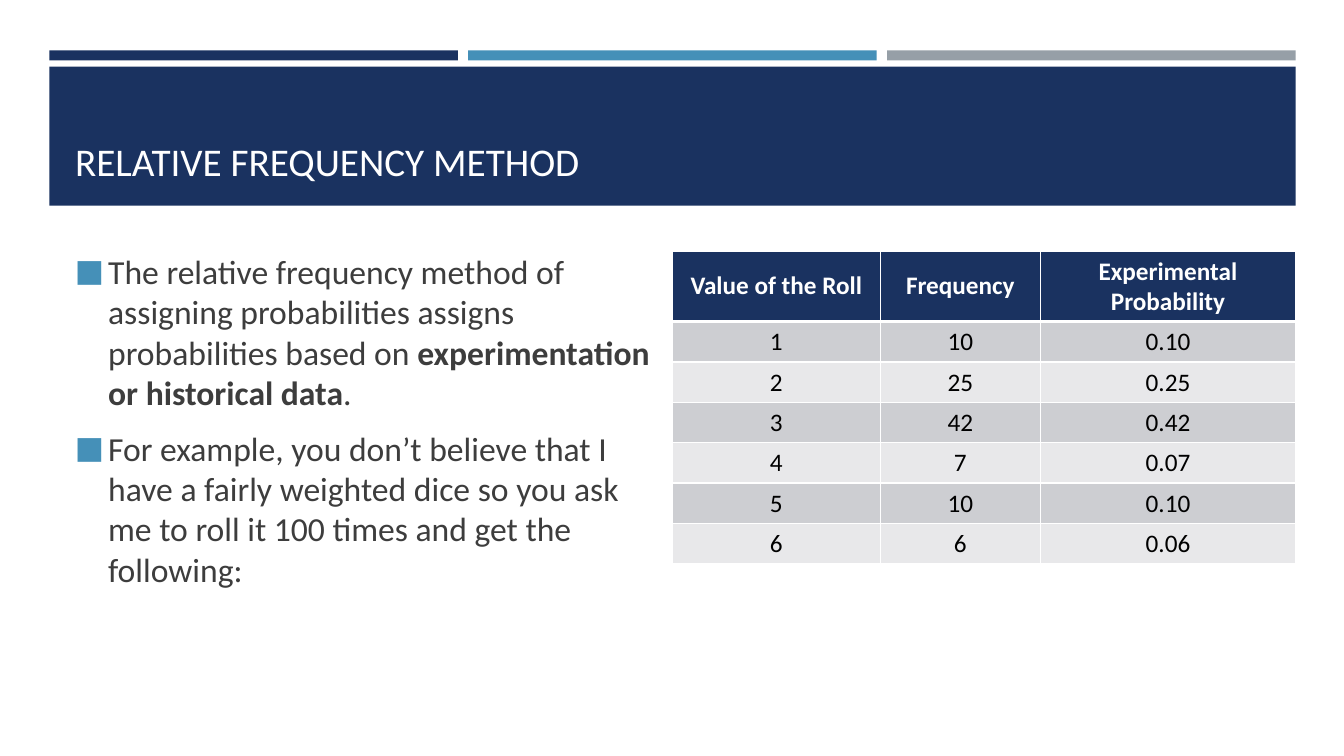
from lxml import etree
from pptx import Presentation
from pptx import util as u
from pptx.dml.color import RGBColor
from pptx.enum import shapes, text
from pptx.oxml.ns import qn

NAVY, BLUE, GREY, WHITE = "1A3260", "4590B8", "969FA7", "FFFFFF"
INK, BLACK = "3D3D3D", "000000"
BANDS = ("CDCED2", "E8E8EA")


def colour(value):
    return RGBColor.from_string(value)


def add_child(parent, tag, **attributes):
    return etree.SubElement(parent, qn(tag), attributes)


class SlideBuilder:
    """Places elements on 12 columns between the margins and rows of 0.1 inch."""
    font = "Calibri"
    margin, column, row = 0.49, 1.03, 0.1

    def __init__(self, deck):
        self.slide = deck.slides.add_slide(deck.slide_layouts[5])

    def box(self, column, row, columns, rows):
        return (u.Inches(self.margin + column * self.column), u.Inches(row * self.row),
                u.Inches(columns * self.column), u.Inches(rows * self.row))

    def style(self, run, size, shade, bold=False):
        run.font.name, run.font.size, run.font.bold = self.font, u.Pt(size), bold
        run.font.color.rgb = colour(shade)

    def bar(self, fill, *place):
        band = self.slide.shapes.add_shape(shapes.MSO_SHAPE.RECTANGLE, *self.box(*place))
        band.shadow.inherit = False
        band.fill.solid()
        band.fill.fore_color.rgb = colour(fill)
        band.line.fill.background()

    def title(self, wording, *place):
        heading = self.slide.shapes.title
        heading.left, heading.top, heading.width, heading.height = self.box(*place)
        frame = heading.text_frame
        frame.text = wording
        frame.word_wrap = True
        frame.auto_size = text.MSO_AUTO_SIZE.NONE
        frame.vertical_anchor = text.MSO_ANCHOR.BOTTOM
        frame.paragraphs[0].alignment = text.PP_ALIGN.LEFT
        self.style(frame.paragraphs[0].runs[0], 28, WHITE)
        # Bring the title in front of the banner
        heading.element.getparent().append(heading.element)

    def bullets(self, points, *place):
        frame = self.slide.shapes.add_textbox(*self.box(*place)).text_frame
        frame.word_wrap = True
        for index, point in enumerate(points):
            paragraph = frame.paragraphs[0] if index == 0 else frame.add_paragraph()
            paragraph.space_before, paragraph.space_after = u.Pt(5), u.Pt(6)
            for wording, bold in point:
                run = paragraph.add_run()
                run.text = wording
                self.style(run, 24, INK, bold)
            properties = paragraph._p.get_or_add_pPr()
            indent = u.Inches(0.33)
            properties.set("marL", str(indent))
            properties.set("indent", str(-indent))
            add_child(add_child(properties, "a:buClr"), "a:srgbClr", val=BLUE)
            add_child(properties, "a:buSzPct", val="92000")
            add_child(properties, "a:buFont", typeface=self.font)
            add_child(properties, "a:buChar", char="■")

    def borders(self, cell, top, bottom):
        properties = cell._tc.get_or_add_tcPr()
        for side, width in zip("LRTB", (1, 1, top, bottom)):
            line = add_child(properties, f"a:ln{side}", w=str(u.Pt(width)))
            add_child(add_child(line, "a:solidFill"), "a:srgbClr", val=WHITE)

    def table(self, rows, widths, heights, *place):
        grid = self.slide.shapes.add_table(len(rows), len(widths), *self.box(*place)).table
        for column, width in zip(grid.columns, widths):
            column.width = u.Inches(width)
        for r, values in enumerate(rows):
            header = r == 0
            grid.rows[r].height = u.Inches(heights[0 if header else 1])
            for c, value in enumerate(values):
                cell = grid.cell(r, c)
                self.borders(cell, 3 if r == 1 else 1, 3 if header else 1)
                cell.fill.solid()
                cell.fill.fore_color.rgb = colour(NAVY if header else BANDS[(r - 1) % 2])
                cell.vertical_anchor = text.MSO_ANCHOR.MIDDLE if header else text.MSO_ANCHOR.TOP
                cell.text_frame.text = value
                paragraph = cell.text_frame.paragraphs[0]
                paragraph.alignment = text.PP_ALIGN.CENTER
                self.style(paragraph.runs[0], 18, WHITE if header else BLACK, header)


def main():
    deck = Presentation()
    deck.slide_width, deck.slide_height = u.Inches(13.33), u.Inches(7.5)
    page = SlideBuilder(deck)

    # Three accent bars above the banner
    gap = 0.1
    width = (12 - 2 * gap) / 3
    for index, shade in enumerate((NAVY, BLUE, GREY)):
        page.bar(shade, index * (width + gap), 5, width, 1)

    # Banner and title
    page.bar(NAVY, 0, 6.6, 12, 13.8)
    page.title("RELATIVE FREQUENCY METHOD", 0.15, 8, 11.7, 10.8)

    # Explanation
    definition = [
        ("The relative frequency method of assigning probabilities assigns "
         "probabilities based on ", False),
        ("experimentation or historical data", True),
        (".", False),
    ]
    example = [("For example, you don’t believe that I have a fairly weighted dice so you "
                "ask me to roll it 100 times and get the following:", False)]
    page.bullets([definition, example], 0.15, 24.4, 5.76, 39.7)

    # Results of the 100 rolls
    frequencies = (10, 25, 42, 7, 10, 6)
    total = sum(frequencies)
    rolls = [("Value of the Roll", "Frequency", "Experimental Probability")]
    rolls += [(str(face), str(count), f"{count / total:.2f}")
              for face, count in enumerate(frequencies, 1)]
    page.table(rolls, (2.06, 1.59, 2.53), (0.7, 0.4), 6, 24.9, 6, 31.3)

    deck.save("out.pptx")


if __name__ == "__main__":
    main()
